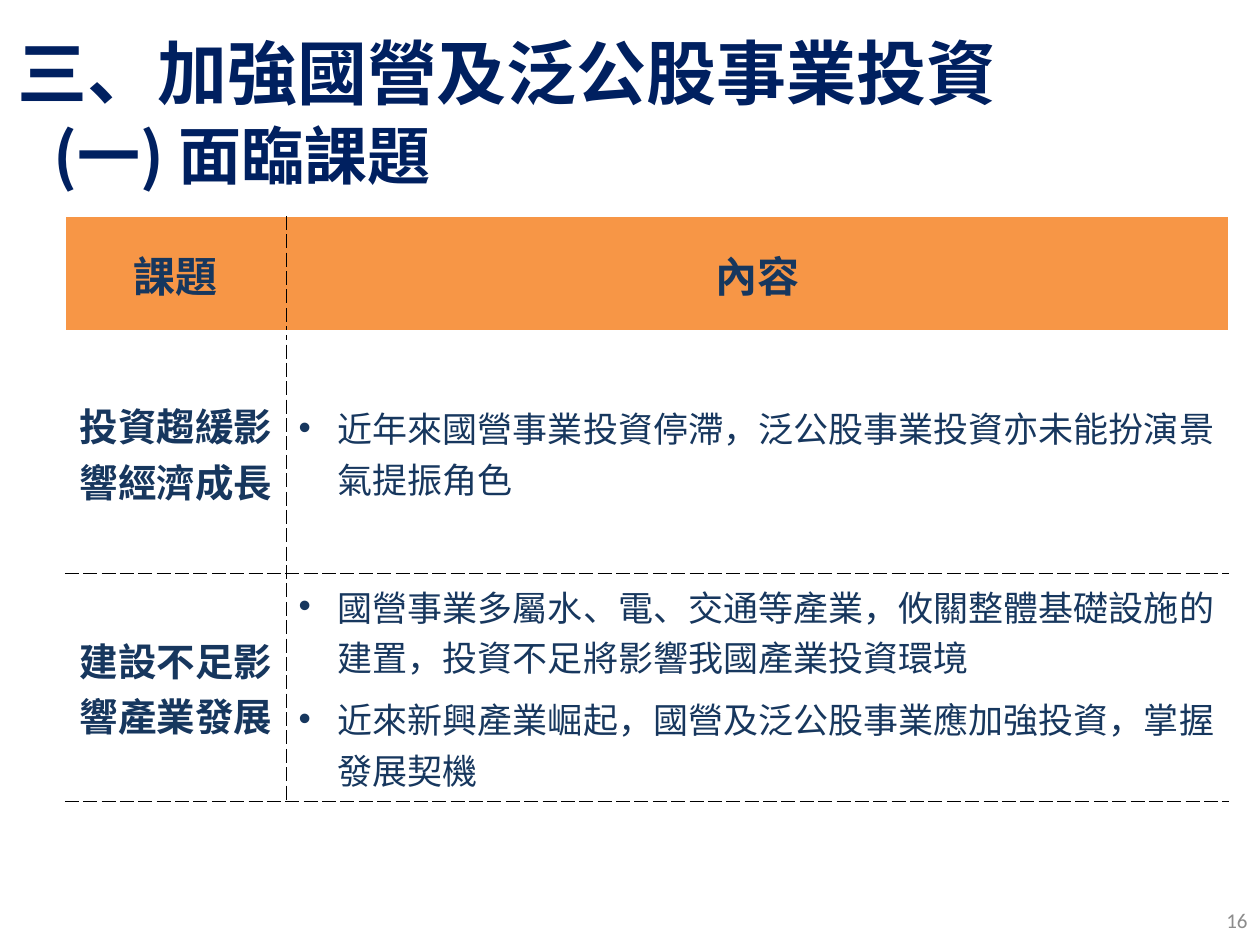
from dataclasses import dataclass

from lxml.etree import SubElement
from pptx import Presentation
from pptx.dml.color import RGBColor
from pptx.enum.text import MSO_ANCHOR, PP_ALIGN
from pptx.oxml import parse_xml
from pptx.oxml.ns import nsdecls, qn
from pptx.util import Inches, Pt


@dataclass(frozen=True)
class Theme:
    """Colours, fonts and type sizes of the slide."""

    navy: str = "002060"
    ink: str = "17375E"
    orange: str = "F79646"
    grey: str = "8C8C8C"
    white: str = "FFFFFF"
    black: str = "000000"
    body_font: str = "Noto Sans CJK SC"
    number_font: str = "Calibri"
    heading: int = 40
    subheading: int = 36
    header: int = 24
    issue: int = 22
    detail: int = 20
    number: int = 12


THEME = Theme()
WIDTH, HEIGHT = Inches(10), Inches(7.5)
HEADERS = ("課題", "內容")
ISSUES = (
    ("投資趨緩影響經濟成長",
     ("近年來國營事業投資停滯，泛公股事業投資亦未能扮演景氣提振角色",)),
    ("建設不足影響產業發展",
     ("國營事業多屬水、電、交通等產業，攸關整體基礎設施的建置，投資不足將影響我國產業投資環境",
      "近來新興產業崛起，國營及泛公股事業應加強投資，掌握發展契機")),
)
COLUMN_SHARES = (1.75 / 9.23, 7.48 / 9.23)
ROW_SHARES = (0.92 / 4.64, 1.91 / 4.64, 1.81 / 4.64)


def slide_box(left, top, width, height):
    """Turn shares of the slide's size into lengths."""
    return (round(left * WIDTH), round(top * HEIGHT),
            round(width * WIDTH), round(height * HEIGHT))


def style_paragraph(paragraph, size, color, bold=False, font=THEME.body_font,
                    align=PP_ALIGN.LEFT):
    """Format the runs and alignment of one paragraph."""
    paragraph.alignment = align
    for run in paragraph.runs:
        run.font.size, run.font.bold, run.font.name = Pt(size), bold, font
        run.font.color.rgb = RGBColor.from_string(color)
        SubElement(run.font._element, qn("a:ea"), typeface=font)


def hang(paragraph, indent):
    """Give a paragraph a hanging indent."""
    properties = paragraph._p.get_or_add_pPr()
    properties.set("marL", str(indent))
    properties.set("indent", str(-indent))
    return properties


def add_line(slide, box, wording, **style):
    """Place one line of text in the box."""
    frame = slide.shapes.add_textbox(*box).text_frame
    frame.word_wrap = True
    frame.vertical_anchor = MSO_ANCHOR.MIDDLE
    frame.text = wording
    style_paragraph(frame.paragraphs[0], **style)
    return frame.paragraphs[0]


def add_headings(slide, box):
    """Place the section title and the subtitle in the two halves of the box."""
    left, top, width, height = box
    line_height = round(height * 0.52)
    lines = (("三、加強國營及泛公股事業投資", THEME.heading, 0, 0),
             ("(一) 面臨課題", THEME.subheading, 0.029, 0.48))
    for wording, size, shift, drop in lines:
        line_box = (left + round(width * shift), top + round(height * drop),
                    width, line_height)
        hang(add_line(slide, line_box, wording, size=size, color=THEME.navy, bold=True),
             Inches(0.79))


def set_borders(cell, **edges):
    """Draw the cell's edges, each given as colour, width and dash."""
    properties = cell._tc.get_or_add_tcPr()
    for position, side in enumerate("LRTB"):
        color, width, dash = edges[side]
        properties.insert(position, parse_xml(
            f'<a:ln{side} {nsdecls("a")} w="{Pt(width)}"><a:solidFill>'
            f'<a:srgbClr val="{color}"/></a:solidFill>'
            f'<a:prstDash val="{dash}"/></a:ln{side}>'))


def fill_details(frame, details):
    """Write the details as bulleted paragraphs."""
    frame.text = "\n".join(details)
    for paragraph in frame.paragraphs:
        style_paragraph(paragraph, THEME.detail, THEME.ink)
        paragraph.space_after = Pt(6)
        properties = hang(paragraph, Inches(0.31))
        SubElement(properties, qn("a:buFont"), typeface="Arial")
        SubElement(properties, qn("a:buChar"), char="•")


def fill_label(frame, wording, size):
    """Write a bold centred label."""
    frame.text = wording
    style_paragraph(frame.paragraphs[0], size, THEME.ink, bold=True,
                    align=PP_ALIGN.CENTER)


def add_issue_table(slide, box):
    """Place the table of issues and their details in the box."""
    table = slide.shapes.add_table(len(ISSUES) + 1, len(HEADERS), *box).table
    for column, share in zip(table.columns, COLUMN_SHARES):
        column.width = round(box[2] * share)
    for row, share in zip(table.rows, ROW_SHARES):
        row.height = round(box[3] * share)

    for column, header in enumerate(HEADERS):
        fill_label(table.cell(0, column).text_frame, header, THEME.header)
    for row, (issue, details) in enumerate(ISSUES, start=1):
        fill_label(table.cell(row, 0).text_frame, issue, THEME.issue)
        fill_details(table.cell(row, 1).text_frame, details)

    plain, thick = (THEME.white, 1, "solid"), (THEME.white, 3, "solid")
    dashed = (THEME.black, 0.5, "sysDash")
    for row in range(len(table.rows)):
        for column in range(len(table.columns)):
            cell = table.cell(row, column)
            cell.vertical_anchor = MSO_ANCHOR.MIDDLE
            if row == 0:
                cell.fill.solid()
                cell.fill.fore_color.rgb = RGBColor.from_string(THEME.orange)
            else:
                cell.fill.background()
            set_borders(cell,
                        L=dashed if column else plain,
                        R=plain if column else dashed,
                        T=dashed if row > 1 else plain,
                        B=dashed if row else thick)


def add_page_number(slide, box):
    """Place the page number at the right of the box."""
    add_line(slide, box, "16", size=THEME.number, color=THEME.grey,
             font=THEME.number_font, align=PP_ALIGN.RIGHT)


def main():
    """Build and save the slide."""
    deck = Presentation()
    deck.slide_width, deck.slide_height = WIDTH, HEIGHT
    slide = deck.slides.add_slide(deck.slide_layouts[6])
    add_page_number(slide, slide_box(0.767, 7.1 / 7.5, 0.233, 0.4 / 7.5))
    add_headings(slide, slide_box(0.004, 0.21 / 7.5, 1, 1.37 / 7.5))
    add_issue_table(slide, slide_box(0.052, 1.72 / 7.5, 0.923, 4.64 / 7.5))
    deck.save("out.pptx")


if __name__ == "__main__":
    main()
